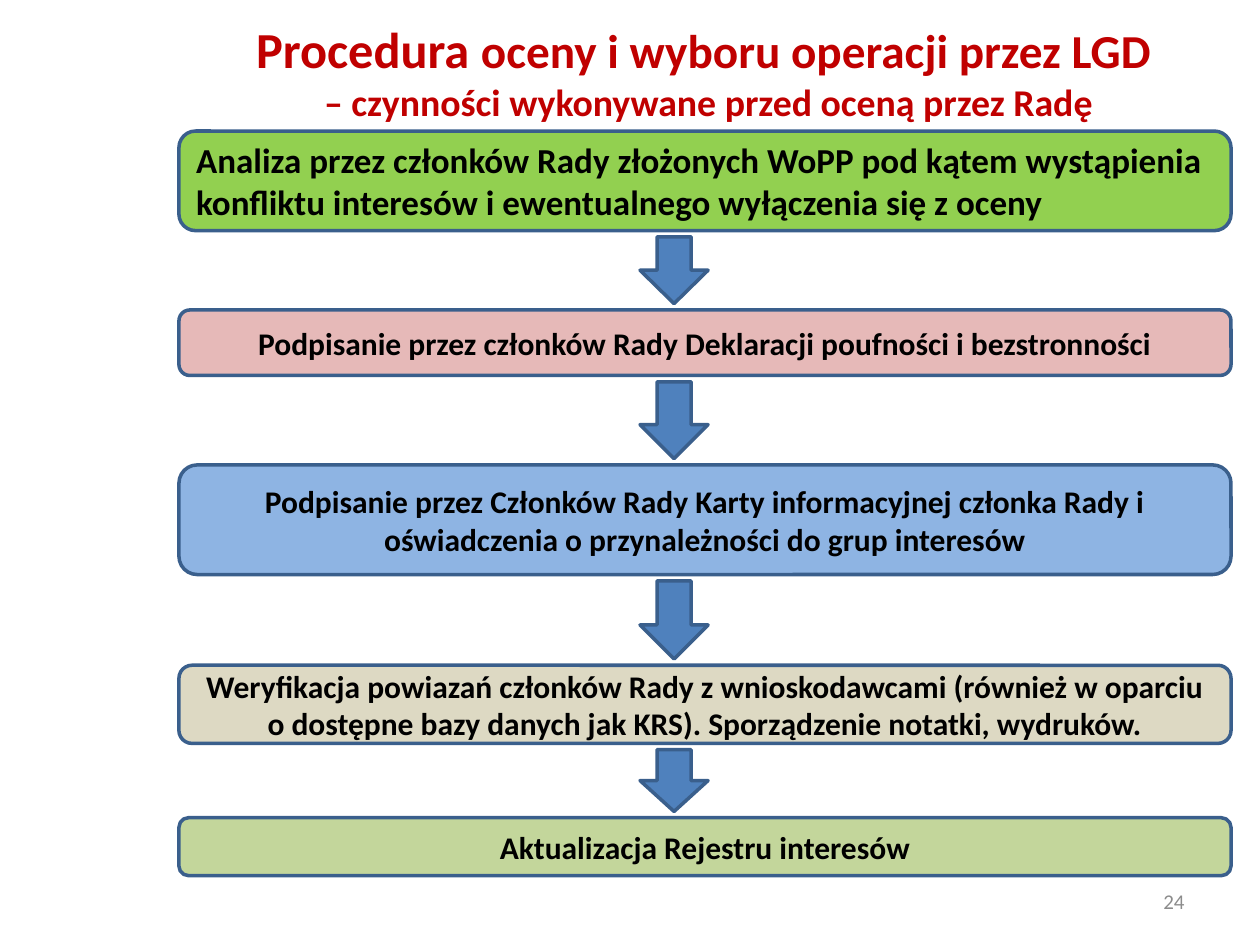
from pptx import Presentation
from pptx.dml.color import RGBColor
from pptx.enum.shapes import MSO_SHAPE as SHAPE
from pptx.enum.text import MSO_ANCHOR as ANCHOR, PP_ALIGN as ALIGN
from pptx.util import Inches, Pt

RED = RGBColor(0xC0, 0x00, 0x00)
BLACK = RGBColor(0x00, 0x00, 0x00)
GREY = RGBColor(0x8C, 0x8C, 0x8C)
BLUE = RGBColor(0x4F, 0x81, 0xBD)
OUTLINE = RGBColor(0x3A, 0x5F, 0x8C)
LIME = RGBColor(0x92, 0xD0, 0x50)
PINK = RGBColor(0xE6, 0xB9, 0xB8)
SKY = RGBColor(0x8E, 0xB4, 0xE3)
SAND = RGBColor(0xDD, 0xD9, 0xC3)
OLIVE = RGBColor(0xC3, 0xD6, 0x9B)

# Content: title lines hold (text, size) runs
TITLE = [
    [("Procedura ", 28.8), ("oceny i wyboru operacji przez LGD ", 27)],
    [("– czynności wykonywane przed oceną przez Radę", 21.6)],
]
# Steps: text, top, height, fill, size, alignment
STEPS = [
    ("Analiza przez członków Rady złożonych WoPP pod kątem wystąpienia "
     "konfliktu interesów i ewentualnego wyłączenia się z oceny",
     1.04, 0.79, LIME, 20, ALIGN.LEFT),
    ("Podpisanie przez członków Rady Deklaracji poufności i bezstronności",
     2.46, 0.52, PINK, 18, ALIGN.CENTER),
    ("Podpisanie przez Członków Rady Karty informacyjnej członka Rady i "
     "oświadczenia o przynależności do grup interesów",
     3.69, 0.87, SKY, 18, ALIGN.CENTER),
    ("Weryfikacja powiazań członków Rady z wnioskodawcami (również w oparciu "
     "o dostępne bazy danych jak KRS). Sporządzenie notatki, wydruków.",
     5.28, 0.62, SAND, 18, ALIGN.CENTER),
    ("Aktualizacja Rejestru interesów",
     6.49, 0.46, OLIVE, 18, ALIGN.CENTER),
]
PAGE = "24"

# Layout in inches
STEP_LEFT, STEP_W = 1.42, 8.35
ARROW_MID, ARROW_W, ARROW_GAP = 5.35, 0.54, 0.05


def add_run(p, text, size, color, bold=True):
    r = p.add_run()
    r.text = text
    r.font.color.rgb = color
    style = {"name": "Calibri", "size": Pt(size), "bold": bold}
    for key, value in style.items():
        setattr(r.font, key, value)


def prepare(sp, align):
    tf = sp.text_frame
    tf.word_wrap = True
    tf.vertical_anchor = ANCHOR.MIDDLE
    p = tf.paragraphs[0]
    p.alignment = align
    return p


def add_block(s, kind, left, top, width, height, fill):
    sp = s.shapes.add_shape(kind, *map(Inches, (left, top, width, height)))
    sp.shadow.inherit = False
    sp.fill.solid()
    sp.fill.fore_color.rgb = fill
    sp.line.color.rgb = OUTLINE
    sp.line.width = Pt(2)
    return sp


prs = Presentation()
prs.slide_width, prs.slide_height = Inches(10), Inches(7.5)
s = prs.slides.add_slide(prs.slide_layouts[5])

# Title
title = s.shapes.title
box = {"left": 1.33, "top": 0.08, "width": 8.59, "height": 0.97}
for key, value in box.items():
    setattr(title, key, Inches(value))
p = prepare(title, ALIGN.CENTER)
for i, line in enumerate(TITLE):
    if i:
        p.add_line_break()
    for text, size in line:
        add_run(p, text, size, RED)

# Steps
for text, top, height, fill, size, align in STEPS:
    sp = add_block(s, SHAPE.ROUNDED_RECTANGLE, STEP_LEFT, top, STEP_W, height, fill)
    add_run(prepare(sp, align), text, size, BLACK)

# Arrows fill the gaps between neighbouring steps
for (_, top, height, *_), (_, next_top, *_) in zip(STEPS, STEPS[1:]):
    start = top + height + ARROW_GAP
    add_block(s, SHAPE.DOWN_ARROW, ARROW_MID - ARROW_W / 2, start,
              ARROW_W, next_top - ARROW_GAP - start, BLUE)

# Page number
number = s.shapes.add_textbox(*map(Inches, (7.17, 6.95, 2.33, 0.4)))
add_run(prepare(number, ALIGN.RIGHT), PAGE, 12, GREY, bold=False)

prs.save("out.pptx")
